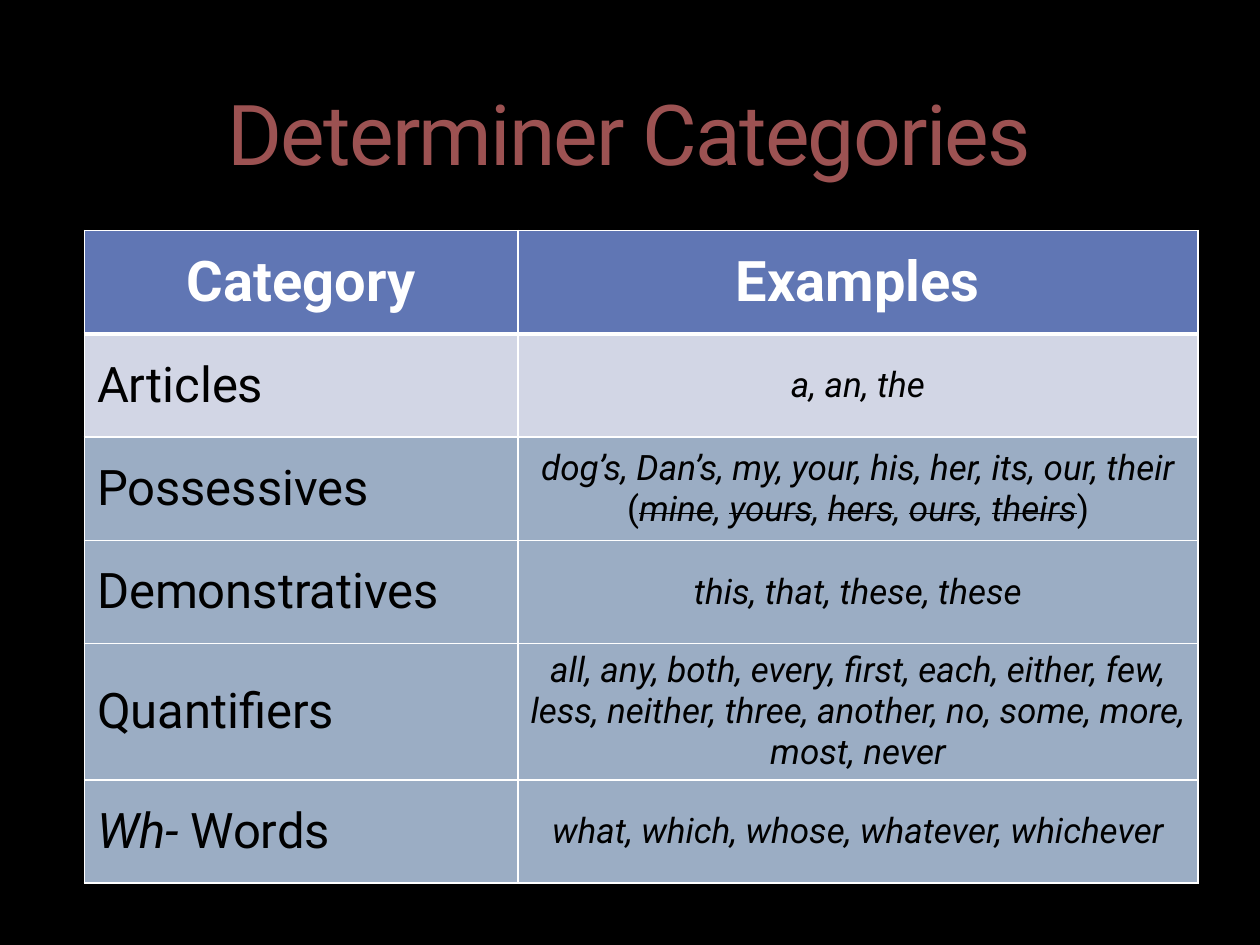
from lxml import etree
from pptx import Presentation
from pptx.dml.color import RGBColor
from pptx.enum.text import MSO_ANCHOR, PP_ALIGN
from pptx.oxml.ns import qn
from pptx.util import Inches, Pt

LEFT, CENTER = PP_ALIGN.LEFT, PP_ALIGN.CENTER
MIDDLE, BOTTOM = MSO_ANCHOR.MIDDLE, MSO_ANCHOR.BOTTOM
BLACK = RGBColor(0x00, 0x00, 0x00)
WHITE = RGBColor(0xFF, 0xFF, 0xFF)
BRICK = RGBColor(0x9C, 0x52, 0x52)
HEADER_BLUE = RGBColor(0x60, 0x76, 0xB4)
PALE_BLUE = RGBColor(0xD2, 0xD6, 0xE5)
GRAY_BLUE = RGBColor(0x9B, 0xAD, 0xC4)
FONT = "Roboto"
TITLE_ONLY = 5

HEADER = ("Category", "Examples")
STRUCK_WORDS = ("mine", "yours", "hers", "ours", "theirs")


def possessive_runs():
    runs = [("dog’s, Dan’s, my, your, his, her, its, our, their ", {}),
            ("(", {"italic": False})]
    for index, word in enumerate(STRUCK_WORDS):
        if index:
            runs.append((", ", {}))
        runs.append((word, {"strike": True}))
    return runs + [(")", {"italic": False})]


# Each cell is plain text or a list of (text, format) runs.
CATEGORIES = [
    ("Articles", "a, an, the"),
    ("Possessives", possessive_runs()),
    ("Demonstratives", "this, that, these, these"),
    ("Quantifiers", "all, any, both, every, first, each, either, few, less, "
                    "neither, three, another, no, some, more, most, never"),
    ([("Wh- ", {"italic": True}), ("Words", {})],
     "what, which, whose, whatever, whichever"),
]


def add_run(paragraph, text, size=20, color=BLACK, bold=False, italic=False,
            strike=False, spacing=None):
    """Spacing between letters is in points."""
    run = paragraph.add_run()
    run.text = text
    font = run.font
    font.name, font.size = FONT, Pt(size)
    font.bold, font.italic = bold, italic
    font.color.rgb = color
    properties = run._r.get_or_add_rPr()
    if strike:
        properties.set("strike", "sngStrike")
    if spacing is not None:
        properties.set("spc", str(int(spacing * 100)))


def set_border(cell, side, width):
    line = etree.SubElement(cell._tc.get_or_add_tcPr(), qn(f"a:ln{side}"),
                            w=str(Pt(width)))
    fill = etree.SubElement(line, qn("a:solidFill"))
    etree.SubElement(fill, qn("a:srgbClr"), val=str(WHITE))


class SlideBuilder:
    def __init__(self, presentation):
        self.slide = presentation.slides.add_slide(
            presentation.slide_layouts[TITLE_ONLY])
        background = self.slide.background.fill
        background.solid()
        background.fore_color.rgb = BLACK

    def title(self, text, left, top, width, height):
        shape = self.slide.shapes.title
        shape.left, shape.top = Inches(left), Inches(top)
        shape.width, shape.height = Inches(width), Inches(height)
        shape.text_frame.vertical_anchor = BOTTOM
        paragraph = shape.text_frame.paragraphs[0]
        paragraph.alignment = CENTER
        add_run(paragraph, text, size=48, color=BRICK, spacing=-1)

    def table(self, rows, left, top, column_widths, row_height):
        table = self.slide.shapes.add_table(
            len(rows), len(column_widths), Inches(left), Inches(top),
            Inches(sum(column_widths)), Inches(row_height * len(rows))).table
        for column, width in zip(table.columns, column_widths):
            column.width = Inches(width)
        for row_index, row in enumerate(rows):
            table.rows[row_index].height = Inches(row_height)
            for column_index, content in enumerate(row):
                self.cell(table.cell(row_index, column_index), content,
                          row_index, column_index)

    def cell(self, cell, content, row_index, column_index):
        is_header, is_example = row_index == 0, column_index == 1
        for side in "LRTB":
            thick = (is_header and side == "B") or (row_index == 1 and side == "T")
            set_border(cell, side, 3 if thick else 1)
        cell.fill.solid()
        cell.fill.fore_color.rgb = (HEADER_BLUE, PALE_BLUE, GRAY_BLUE)[min(row_index, 2)]
        cell.vertical_anchor = MIDDLE
        paragraph = cell.text_frame.paragraphs[0]
        paragraph.alignment = CENTER if is_header or is_example else LEFT
        if is_header:
            style = {"size": 32, "color": WHITE, "bold": True}
        elif is_example:
            style = {"size": 20, "italic": True}
        else:
            style = {"size": 28}
        runs = [(content, {})] if isinstance(content, str) else content
        for text, changes in runs:
            add_run(paragraph, text, **{**style, **changes})


def main():
    presentation = Presentation()
    presentation.slide_width, presentation.slide_height = Inches(10), Inches(7.5)
    builder = SlideBuilder(presentation)
    builder.table([HEADER, *CATEGORIES], left=0.67, top=1.83,
                  column_widths=(3.44, 5.4), row_height=0.82)
    builder.title("Determiner Categories", 0.33, 0.17, 9.33, 1.33)
    presentation.save("out.pptx")


if __name__ == "__main__":
    main()
